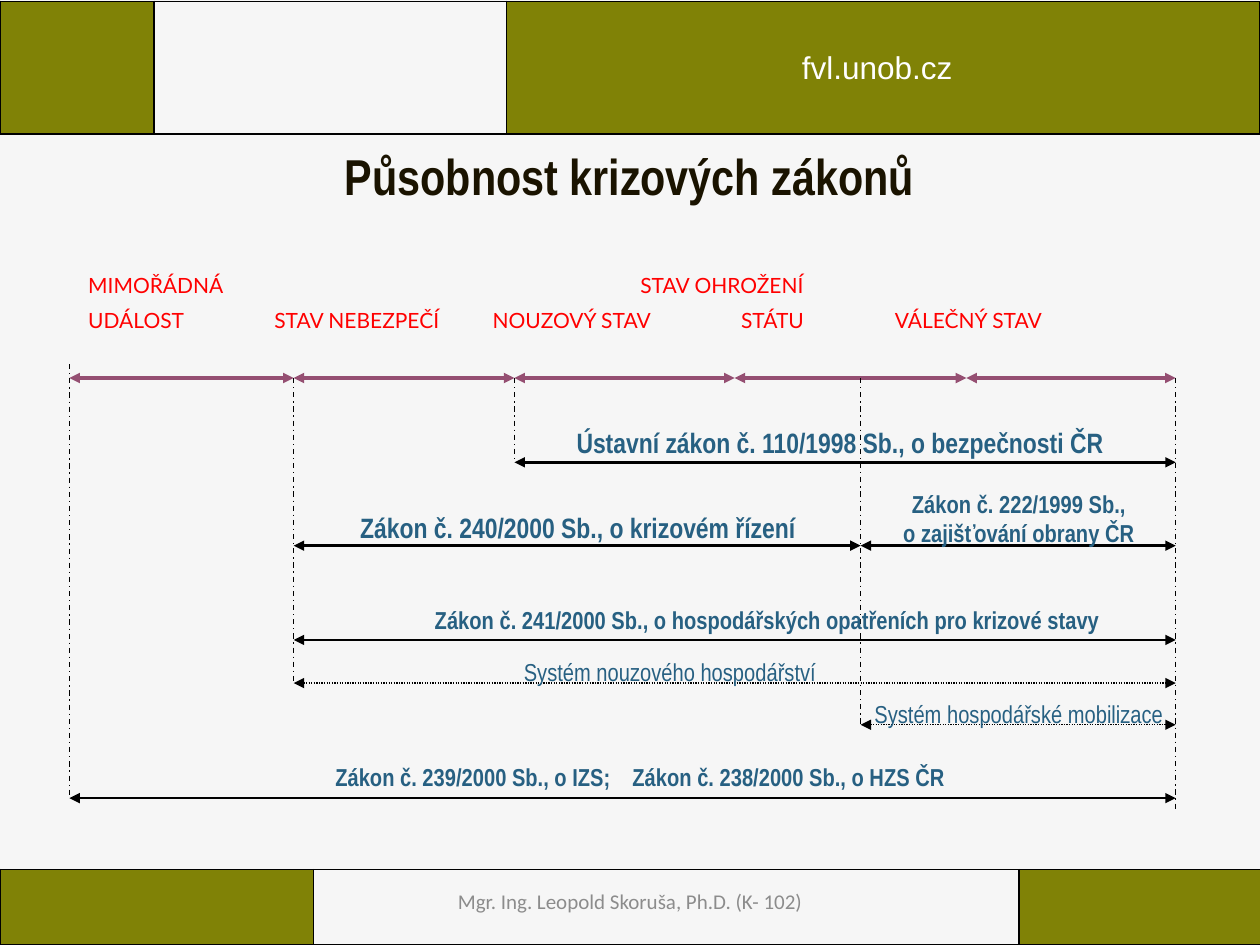
from itertools import pairwise

from lxml.etree import SubElement
from pptx import Presentation
from pptx.dml.color import RGBColor
from pptx.enum.dml import MSO_LINE
from pptx.enum.shapes import MSO_CONNECTOR
from pptx.enum.text import MSO_ANCHOR, PP_ALIGN
from pptx.oxml.ns import qn
from pptx.util import Cm, Pt

PAPER = RGBColor(0xF6, 0xF6, 0xF6)
OLIVE = RGBColor(0x80, 0x82, 0x06)
WHITE = RGBColor(0xFF, 0xFF, 0xFF)
BLACK = RGBColor(0, 0, 0)
TITLE_BROWN = RGBColor(0x1A, 0x13, 0)
AUTHOR_GRAY = RGBColor(0x8C, 0x8C, 0x8C)
PHASE_RED = RGBColor(0xFF, 0, 0)
PHASE_PURPLE = RGBColor(0x95, 0x4F, 0x72)
LAW_BLUE = RGBColor(0x27, 0x60, 0x82)


def add_text(slide, text, box, *, size, font, color, bold=False, align=PP_ALIGN.CENTER,
             anchor=MSO_ANCHOR.TOP, inset=0.25, tabs=(), gap=0, spacing=None):
    """Place text in a box given in centimetres, one paragraph per line."""
    frame = slide.shapes.add_textbox(*map(Cm, box)).text_frame
    frame.word_wrap = True
    frame.vertical_anchor = anchor
    frame.margin_left = Cm(inset)
    for index, line in enumerate(text.split("\n")):
        paragraph = frame.add_paragraph() if index else frame.paragraphs[0]
        paragraph.text = line
        paragraph.alignment = align
        if spacing:
            paragraph.line_spacing = spacing
        if index and gap:
            paragraph.space_before = Pt(gap)
        if tabs:
            stops = SubElement(paragraph._p.get_or_add_pPr(), qn("a:tabLst"))
            for stop in tabs[index]:
                SubElement(stops, qn("a:tab"), pos=str(Cm(stop)), algn="l")
        for run in paragraph.runs:
            run.font.size = Pt(size)
            run.font.name = font
            run.font.bold = bold
            run.font.color.rgb = color


def add_line(slide, start, end, *, color=BLACK, width=1.5, dash=None, arrows=True):
    """Draw a straight line, by default with an arrowhead at both ends."""
    connector = slide.shapes.add_connector(MSO_CONNECTOR.STRAIGHT, *map(Cm, (*start, *end)))
    connector.line.color.rgb = color
    connector.line.width = Pt(width)
    if dash:
        connector.line.dash_style = dash
    properties = connector._element.spPr
    if arrows:
        outline = properties.find(qn("a:ln"))
        for end_tag in ("a:headEnd", "a:tailEnd"):
            SubElement(outline, qn(end_tag), type="triangle")
    SubElement(properties, qn("a:effectLst"))


def add_band(slide, box, widths):
    """Draw a one-row table with olive outer cells and an empty middle."""
    table = slide.shapes.add_table(1, len(widths), *map(Cm, box)).table
    table.first_row = table.horz_banding = False
    for index, width in enumerate(widths):
        table.columns[index].width = Cm(width)
        cell = table.cell(0, index)
        for side in ("a:lnL", "a:lnR", "a:lnT", "a:lnB"):
            border = SubElement(cell._tc.get_or_add_tcPr(), qn(side), w=str(Pt(1)))
            fill = SubElement(border, qn("a:solidFill"))
            SubElement(fill, qn("a:srgbClr"), val=str(BLACK))
        if index == 1:
            cell.fill.background()
        else:
            cell.fill.solid()
            cell.fill.fore_color.rgb = OLIVE


def add_header(slide, box):
    """Draw the top band with the web address."""
    left, top, _, _ = box
    add_band(slide, box, (3.1, 7.11, 15.19))
    add_text(slide, "fvl.unob.cz", (left + 14.94, top + 0.81, 5.49, 1.02),
             size=18, font="Arial", color=WHITE)


def add_footer(slide, box):
    """Draw the bottom band with the author."""
    left, top, _, _ = box
    add_band(slide, box, (6.32, 14.22, 4.88))
    add_text(slide, "Mgr. Ing. Leopold Skoruša, Ph.D. (K- 102)",
             (left + 8.41, top + 0.13, 8.59, 1.02), size=12, font="Calibri",
             color=AUTHOR_GRAY, anchor=MSO_ANCHOR.MIDDLE)


def add_phase_names(slide, box):
    """Write the names of the crisis states above the time axis."""
    names = ("MIMOŘÁDNÁ\tSTAV OHROŽENÍ\n"
             "UDÁLOST\tSTAV NEBEZPEČÍ\tNOUZOVÝ STAV\tSTÁTU\tVÁLEČNÝ STAV")
    add_text(slide, names, box, size=12, font="Lato", color=PHASE_RED,
             align=PP_ALIGN.LEFT, inset=0.79, gap=6,
             tabs=((11.13,), (3.75, 8.15, 13.16, 16.26)))


def add_timeline(slide, box):
    """Draw the time axis, the reach of each law and the law names."""
    left, top, end, bottom = box
    danger, emergency, threat, defence, war = 4.52, 8.97, 13.41, 15.95, 18.08

    for start, stop in pairwise((0, danger, emergency, threat, war, end)):
        add_line(slide, (left + start, top), (left + stop, top), color=PHASE_PURPLE, width=2)

    limits = ((0, -0.28, 8.41), (danger, 0, 6.15), (emergency, 0, 1.7),
              (defence, 0, 6.99), (end, 0, bottom))
    for x, upper, lower in limits:
        add_line(slide, (left + x, top + upper), (left + x, top + lower),
                 width=0.75, dash=MSO_LINE.DASH_DOT, arrows=False)

    law_reaches = ((emergency, end, 1.7), (danger, defence, 3.38), (defence, end, 3.38),
                   (danger, end, 5.28), (0, end, 8.47))
    for start, stop, y in law_reaches:
        add_line(slide, (left + start, top + y), (left + stop, top + y))
    for start, y in ((danger, 6.15), (defence, 6.99)):
        add_line(slide, (left + start, top + y), (left + end, top + y),
                 width=0.75, dash=MSO_LINE.ROUND_DOT)

    major = {"size": 16, "bold": True}
    minor = {"size": 14, "bold": True}
    system = {"size": 14}
    law_names = (
        ("Ústavní zákon č. 110/1998 Sb., o bezpečnosti ČR", (8.97, 0.84, 13.13, 0.94), major),
        ("Zákon č. 240/2000 Sb., o krizovém řízení", (4.75, 2.54, 11, 0.94), major),
        ("Zákon č. 222/1999 Sb.,\no zajišťování obrany ČR", (16.18, 2.11, 5.92, 1.45), minor),
        ("Zákon č. 241/2000 Sb., o hospodářských opatřeních pro krizové stavy",
         (4.52, 4.45, 17.78, 0.86), {**minor, "inset": 1.57}),
        ("Systém nouzového hospodářství", (4.52, 5.51, 17.6, 0.86),
         {**system, "align": PP_ALIGN.LEFT, "inset": 4.64}),
        ("Systém hospodářské mobilizace", (15.75, 6.35, 6.78, 0.86), system),
        ("Zákon č. 239/2000 Sb., o IZS;\tZákon č. 238/2000 Sb., o HZS ČR",
         (0.51, 7.62, 22.02, 0.86),
         {**minor, "align": PP_ALIGN.LEFT, "inset": 4.85, "tabs": ((5.99,),)}),
    )
    for name, (x, y, width, height), style in law_names:
        add_text(slide, name, (left + x, top + y, width, height),
                 font="Arial Narrow", color=LAW_BLUE, **style)


def main():
    """Build the slide and save it."""
    presentation = Presentation()
    presentation.slide_width = Cm(25.4)
    presentation.slide_height = Cm(19.05)
    slide = presentation.slides.add_slide(presentation.slide_layouts[6])
    slide.background.fill.solid()
    slide.background.fill.fore_color.rgb = PAPER
    add_footer(slide, (0, 17.53, 25.42, 1.52))
    add_header(slide, (0, 0.03, 25.4, 2.67))
    add_text(slide, "Působnost krizových zákonů", (1.75, 2.9, 21.89, 1.42), size=28.8,
             font="Arial Narrow", color=TITLE_BROWN, bold=True,
             anchor=MSO_ANCHOR.MIDDLE, spacing=0.9)
    add_phase_names(slide, (0.99, 5.36, 23.01, 1.55))
    add_timeline(slide, (1.4, 7.62, 22.3, 8.69))
    presentation.save("out.pptx")


if __name__ == "__main__":
    main()
